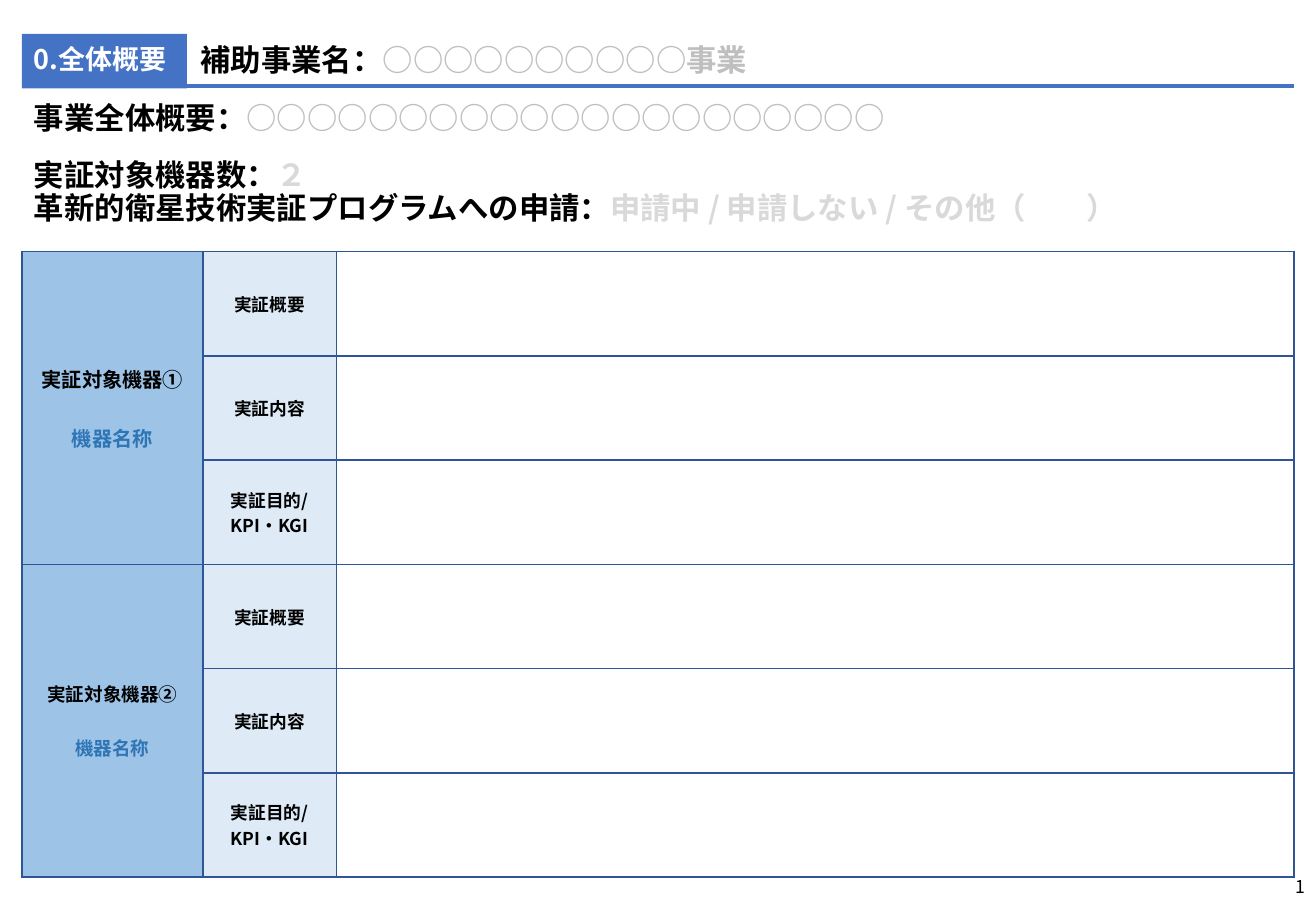
from lxml import etree
from pptx import Presentation
from pptx.dml.color import RGBColor
from pptx.enum.shapes import MSO_CONNECTOR, MSO_SHAPE
from pptx.enum.text import MSO_ANCHOR, PP_ALIGN
from pptx.oxml.ns import qn
from pptx.util import Cm, Pt

LEFT, CENTER, RIGHT = PP_ALIGN.LEFT, PP_ALIGN.CENTER, PP_ALIGN.RIGHT
TOP, MIDDLE = MSO_ANCHOR.TOP, MSO_ANCHOR.MIDDLE
RECT, STRAIGHT = MSO_SHAPE.RECTANGLE, MSO_CONNECTOR.STRAIGHT

FONT = "Noto Sans CJK JP"
BLACK, WHITE = "000000", "FFFFFF"
BLUE, BORDER, NAME_BLUE = "4472C4", "2F5597", "2E75B6"
DEVICE_FILL, ITEM_FILL = "9DC3E6", "DEEBF7"
GRAY, LIGHT_GRAY = "BFBFBF", "D9D9D9"

MARGIN, CONTENT_W = 0.46, 26.59
COLUMNS = (3.78, 2.79, 20.02)
ROW_H = 2.18
ITEMS = (["実証概要"], ["実証内容"], ["実証目的/", "KPI・KGI"])
DEVICES = (("実証対象機器①", 12), ("実証対象機器②", 11))


def rgb(color):
    return RGBColor.from_string(color)


def add_run(p, text, size, color, bold=True):
    r = p.add_run()
    r.text = text
    r.font.size = Pt(size)
    r.font.bold = bold
    r.font.name = FONT
    r.font.color.rgb = rgb(color)
    etree.SubElement(r.font._element, qn("a:ea"), typeface=FONT)


def fill_text(tf, lines, size, align=LEFT, spacing=1.0, bold=True, gap=0):
    """Each line is a list of (text, color) runs; gap is in points."""
    for i, runs in enumerate(lines):
        p = tf.add_paragraph() if i else tf.paragraphs[0]
        p.alignment = align
        p.line_spacing = spacing
        if i and gap:
            p.space_before = Pt(gap)
        for text, color in runs:
            add_run(p, text, size, color, bold)


def add_text(s, x, y, w, h, lines, size=18, anchor=TOP, **style):
    tf = s.shapes.add_textbox(Cm(x), Cm(y), Cm(w), Cm(h)).text_frame
    tf.word_wrap = True
    tf.vertical_anchor = anchor
    fill_text(tf, lines, size, **style)


def add_label(s, x, y, w, h, text):
    sp = s.shapes.add_shape(RECT, Cm(x), Cm(y), Cm(w), Cm(h))
    sp.shadow.inherit = False
    sp.fill.solid()
    sp.fill.fore_color.rgb = rgb(BLUE)
    sp.line.fill.background()
    sp.text_frame.vertical_anchor = MIDDLE
    fill_text(sp.text_frame, [[(text, WHITE)]], 16, spacing=0.9)


def add_rule(s, x, y, w):
    line = s.shapes.add_connector(STRAIGHT, Cm(x), Cm(y), Cm(x + w), Cm(y))
    line.line.color.rgb = rgb(BLUE)
    line.line.width = Pt(2.5)
    etree.SubElement(line._element.spPr, qn("a:effectLst"))


def style_cell(cell, color):
    tcPr = cell._tc.get_or_add_tcPr()
    for side in ("lnL", "lnR", "lnT", "lnB"):
        ln = etree.SubElement(tcPr, qn(f"a:{side}"), w=str(Pt(1)))
        solid = etree.SubElement(ln, qn("a:solidFill"))
        etree.SubElement(solid, qn("a:srgbClr"), val=BORDER)
    cell.vertical_anchor = MIDDLE
    cell.fill.solid()
    cell.fill.fore_color.rgb = rgb(color)


def add_device_table(s, x, y):
    count = len(ITEMS) * len(DEVICES)
    table = s.shapes.add_table(count, len(COLUMNS), Cm(x), Cm(y),
                               Cm(CONTENT_W), Cm(ROW_H * count)).table
    for column, width in zip(table.columns, COLUMNS):
        column.width = Cm(width)
    for i, row in enumerate(table.rows):
        row.height = Cm(ROW_H)
        for cell, color in zip(row.cells, (DEVICE_FILL, ITEM_FILL, WHITE)):
            style_cell(cell, color)
        item = [[(text, BLACK)] for text in ITEMS[i % len(ITEMS)]]
        fill_text(table.cell(i, 1).text_frame, item, 10.5, CENTER)

    # Device names span their item rows
    for i, (device, size) in enumerate(DEVICES):
        first = i * len(ITEMS)
        cell = table.cell(first, 0)
        cell.merge(table.cell(first + len(ITEMS) - 1, 0))
        lines = [[(device, BLACK)], [("機器名称", NAME_BLUE)]]
        fill_text(cell.text_frame, lines, size, CENTER, gap=size * 1.45)


def main():
    prs = Presentation()
    prs.slide_width, prs.slide_height = Cm(27.51), Cm(19.05)
    s = prs.slides.add_slide(prs.slide_layouts[6])

    # Project overview
    add_text(s, MARGIN, 2.03, CONTENT_W, 1.5,
             [[("事業全体概要：", BLACK), ("○" * 21, GRAY)]], spacing=0.9)

    # Header
    add_label(s, MARGIN, 0.71, 3.45, 1.14, "0.全体概要")
    add_text(s, 3.94, 0.71, 23.14, 1.14,
             [[("補助事業名：", BLACK), ("○" * 10 + "事業", GRAY)]],
             anchor=MIDDLE, spacing=0.9)

    # Page number
    add_text(s, 21.34, 18.03, 6.2, 1.02, [[("1", BLACK)]], size=10.5,
             anchor=MIDDLE, align=RIGHT, bold=False)
    add_rule(s, MARGIN, 1.8, CONTENT_W)

    # Number of devices and application status
    add_text(s, MARGIN, 3.23, 27.05, 1.98, [
        [("実証対象機器数：", BLACK), ("２", LIGHT_GRAY)],
        [("革新的衛星技術実証プログラムへの申請：", BLACK),
         ("申請中 / 申請しない / その他（　　）", LIGHT_GRAY)],
    ], spacing=0.9)

    # Devices
    add_device_table(s, MARGIN, 5.26)
    prs.save("out.pptx")


if __name__ == "__main__":
    main()
